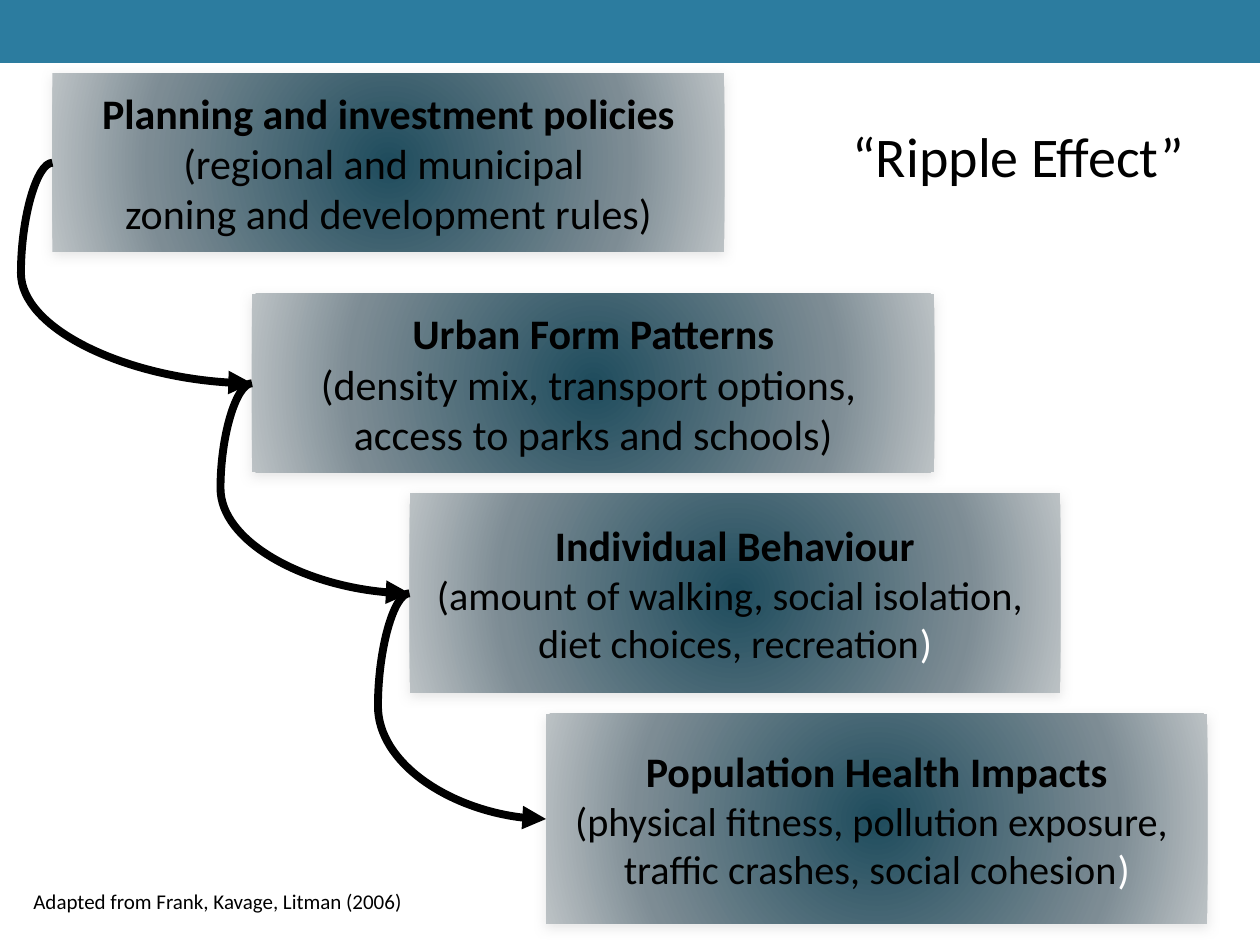
"""Build a slide with a cascade of four boxes that shows the ripple effect of planning."""
from lxml import etree
from pptx import Presentation
from pptx.dml.color import RGBColor
from pptx.enum.shapes import MSO_CONNECTOR, MSO_SHAPE
from pptx.enum.text import MSO_ANCHOR, MSO_AUTO_SIZE, PP_ALIGN
from pptx.oxml import parse_xml
from pptx.oxml.ns import nsdecls, qn
from pptx.util import Inches, Pt

RECTANGLE = MSO_SHAPE.RECTANGLE
CURVE = MSO_CONNECTOR.CURVE
LEFT, CENTER = PP_ALIGN.LEFT, PP_ALIGN.CENTER
TOP, MIDDLE = MSO_ANCHOR.TOP, MSO_ANCHOR.MIDDLE
GROW, FIXED = MSO_AUTO_SIZE.SHAPE_TO_FIT_TEXT, MSO_AUTO_SIZE.NONE
TITLE_ONLY = 5
LEFT_SIDE = 1
CELLS_PER_INCH = 12
COLUMNS, ROWS = 120, 90
BLACK, WHITE, BAND = "000000", "FFFFFF", "2C7C9F"
GLOW = [(0, "1F4C5D"), (69, "7D8C94"), (100, "BCC2C5")]

STEPS = [
    ((5, 7, 64, 17), 24, "Planning and investment policies",
     ["(regional and municipal ", "zoning and development rules)"], ""),
    ((24, 28, 65, 17), 24, "Urban Form Patterns",
     ["(density mix, transport options, ", "access to parks and schools)"], ""),
    ((39, 47, 62, 19), 23, "Individual Behaviour",
     ["(amount of walking, social isolation, ", "diet choices, recreation"], ")"),
    ((52, 68, 63, 20), 23, "Population Health Impacts",
     ["(physical fitness, pollution exposure, ", "traffic crashes, social cohesion"], ")"),
]


def cells(count):
    """Return the length of a number of grid cells."""
    return Inches(count / CELLS_PER_INCH)


def color(value):
    """Return a colour from a hex string."""
    return RGBColor.from_string(value)


def add_run(paragraph, text, size=24, bold=False, fill=BLACK, font="Calibri"):
    """Add formatted text to a paragraph."""
    run = paragraph.add_run()
    run.text = text
    run.font.name, run.font.size, run.font.bold = font, Pt(size), bold
    run.font.color.rgb = color(fill)


class CascadeSlide:
    """Hold the slide and the style of its elements."""

    def __init__(self, presentation):
        """Add a title-only slide to the presentation."""
        self.slide = presentation.slides.add_slide(presentation.slide_layouts[TITLE_ONLY])
        self.shapes = self.slide.shapes

    def rectangle(self, area):
        """Add a plain rectangle without line or shadow."""
        shape = self.shapes.add_shape(RECTANGLE, *map(cells, area))
        shape.line.fill.background()
        shape.shadow.inherit = False
        return shape

    def band(self, area, fill):
        """Add a rectangle of one colour."""
        shape = self.rectangle(area)
        shape.fill.solid()
        shape.fill.fore_color.rgb = color(fill)

    def frame(self, shape, align, anchor, auto_size):
        """Set up the text frame of a shape and return it."""
        frame = shape.text_frame
        frame.word_wrap = False
        frame.auto_size = auto_size
        frame.vertical_anchor = anchor
        frame.paragraphs[0].alignment = align
        return frame

    def glow(self, shape):
        """Give a shape a radial gradient and a soft shadow."""
        properties = shape._element.spPr
        stops = "".join(f'<a:gs pos="{position * 1000}"><a:srgbClr val="{value}"/></a:gs>'
                        for position, value in GLOW)
        gradient = parse_xml(
            f'<a:gradFill {nsdecls("a")} rotWithShape="1"><a:gsLst>{stops}</a:gsLst>'
            '<a:path path="circle"><a:fillToRect l="50000" t="50000" r="50000" b="50000"/>'
            '</a:path></a:gradFill>')
        properties.find(qn("a:prstGeom")).addnext(gradient)
        properties.find(qn("a:effectLst")).append(parse_xml(
            f'<a:outerShdw {nsdecls("a")} blurRad="{Pt(7)}" dist="{Pt(2)}" dir="5400000" '
            'rotWithShape="0"><a:srgbClr val="C0C0C0"><a:alpha val="40000"/></a:srgbClr>'
            '</a:outerShdw>'))

    def step(self, area, size, heading, details, ending):
        """Add a box with a bold heading and its details."""
        shape = self.rectangle(area)
        self.glow(shape)
        frame = self.frame(shape, CENTER, MIDDLE, FIXED)
        add_run(frame.paragraphs[0], heading, bold=True)
        for detail in details:
            paragraph = frame.add_paragraph()
            paragraph.alignment = CENTER
            add_run(paragraph, detail, size=size)
        if ending:
            add_run(paragraph, ending, size=size, fill=WHITE)
        return shape

    def arrow(self, start, end, bulge=3):
        """Join the left sides of two boxes with a curved arrow."""
        connector = self.shapes.add_connector(CURVE, 0, 0, 0, 0)
        connector.begin_connect(start, LEFT_SIDE)
        connector.end_connect(end, LEFT_SIDE)
        connector.line.width = Pt(4.5)
        connector.line.color.rgb = color(BLACK)
        properties = connector._element.spPr
        adjust = round(-100000 * cells(bulge) / connector.width)
        guides = properties.find(qn("a:prstGeom")).get_or_add_avLst()
        etree.SubElement(guides, qn("a:gd"), name="adj1", fmla=f"val {adjust}")
        etree.SubElement(properties.find(qn("a:ln")), qn("a:tailEnd"), type="triangle")
        etree.SubElement(properties, qn("a:effectLst"))

    def label(self, area, text, size):
        """Add a text box of one line."""
        shape = self.shapes.add_textbox(*map(cells, area))
        add_run(self.frame(shape, LEFT, TOP, GROW).paragraphs[0], text, size=size)

    def title(self, area, text, size):
        """Place and fill the title."""
        shape = self.shapes.title
        shape.left, shape.top, shape.width, shape.height = map(cells, area)
        add_run(self.frame(shape, LEFT, TOP, GROW).paragraphs[0], text, size=size)


def main():
    """Build and save the presentation."""
    presentation = Presentation()
    presentation.slide_width, presentation.slide_height = cells(COLUMNS), cells(ROWS)
    cascade = CascadeSlide(presentation)
    boxes = [cascade.step(*step) for step in STEPS]
    for start, end in zip(boxes, boxes[1:]):
        cascade.arrow(start, end)
    cascade.band((0, 0, COLUMNS, 6), BAND)
    cascade.label((2, 84, 37.8, 3.6), "Adapted from Frank, Kavage, Litman (2006)", 12)
    cascade.title((80, 11, 36.1, 7.6), "“Ripple Effect”", 32)
    presentation.save("out.pptx")


if __name__ == "__main__":
    main()
